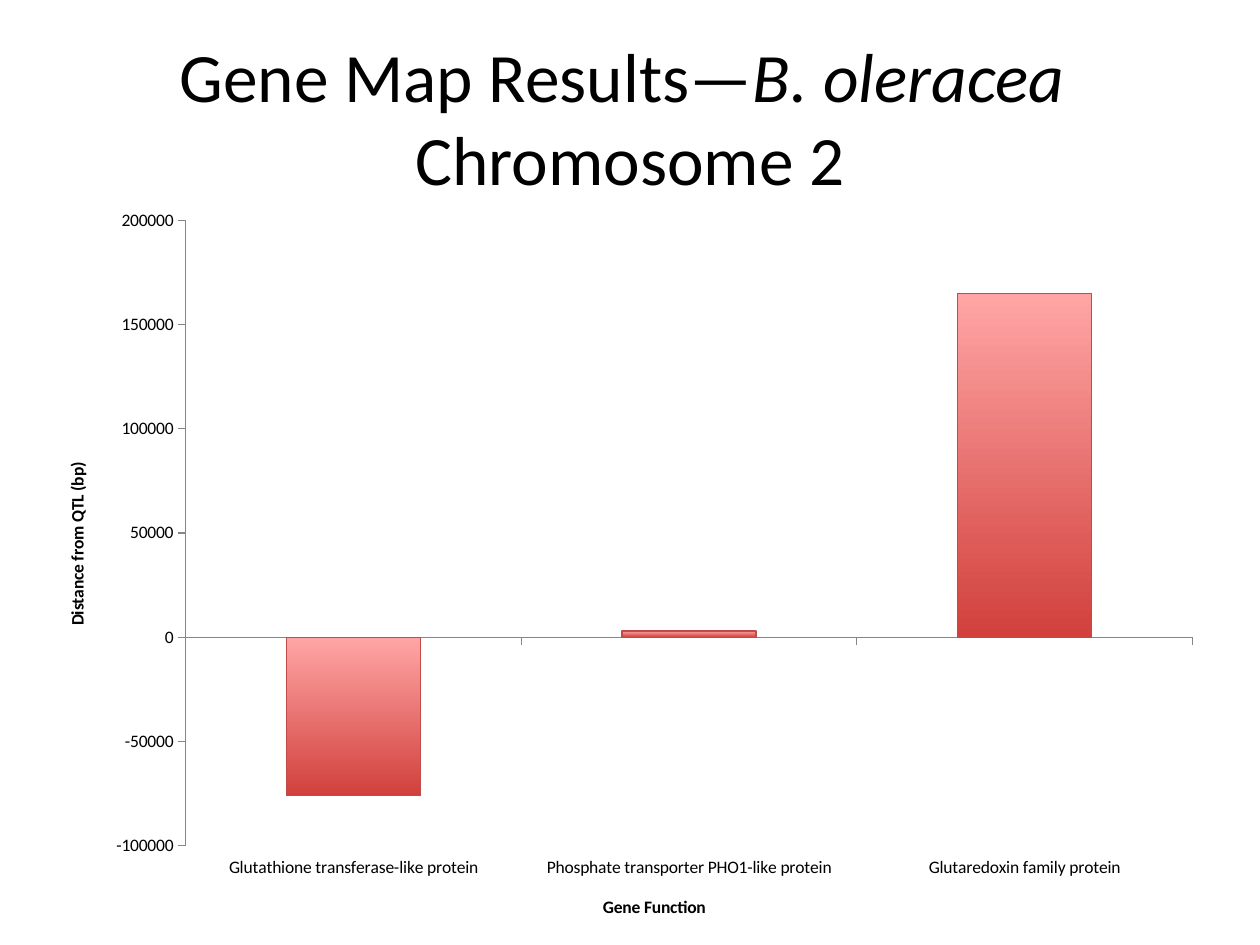
from pptx import Presentation
from pptx.chart.data import CategoryChartData
from pptx.dml.color import RGBColor
from pptx.enum.chart import XL_CHART_TYPE as ChartType, XL_TICK_LABEL_POSITION as LabelPos
from pptx.enum.chart import XL_TICK_MARK as TickMark
from pptx.enum.text import MSO_ANCHOR, PP_ALIGN
from pptx.util import Cm, Pt

COLORS = {"text": "000000", "axis": "868686", "bar_dark": "D1403C",
          "bar_light": "FFA6A5", "bar_line": "BF4C48"}
FONT = "Calibri"
GENES = {
    "Glutathione transferase-like protein": -76000,
    "Phosphate transporter PHO1-like protein": 3000,
    "Glutaredoxin family protein": 165000,
}


def color(name):
    return RGBColor.from_string(COLORS[name])


def style_font(font, size, bold=False, italic=False):
    font.name, font.size = FONT, Pt(size)
    font.bold, font.italic = bold, italic
    font.color.rgb = color("text")


def add_title(slide, x, y, w, h):
    sp = slide.shapes.title
    sp.left, sp.top, sp.width, sp.height = x, y, w, h
    tf = sp.text_frame
    tf.word_wrap = True
    tf.vertical_anchor = MSO_ANCHOR.MIDDLE
    p = tf.paragraphs[0]
    p.alignment = PP_ALIGN.CENTER
    for text, italic in (("Gene Map Results—", False), ("B. oleracea ", True), (None, False),
                         ("Chromosome 2", False)):
        if text is None:
            p.add_line_break()
            continue
        r = p.add_run()
        r.text = text
        style_font(r.font, 39.6, italic=italic)


def style_axis(axis, title):
    axis.has_major_gridlines = False
    axis.major_tick_mark = TickMark.OUTSIDE
    axis.minor_tick_mark = TickMark.NONE
    axis.format.line.color.rgb = color("axis")
    axis.format.line.width = Pt(0.75)
    style_font(axis.tick_labels.font, 10)
    r = axis.axis_title.text_frame.paragraphs[0].add_run()
    r.text = title
    style_font(r.font, 10, bold=True)


def add_distance_chart(slide, x, y, w, h):
    data = CategoryChartData(number_format="General")
    data.categories = list(GENES)
    data.add_series("Series 1", list(GENES.values()))
    chart = slide.shapes.add_chart(ChartType.COLUMN_CLUSTERED, x, y, w, h, data).chart
    style_font(chart.font, 10)
    chart.has_legend = False
    chart.has_title = False

    style_axis(chart.category_axis, "Gene Function")
    chart.category_axis.tick_label_position = LabelPos.LOW
    style_axis(chart.value_axis, "Distance from QTL (bp)")
    chart.value_axis.minimum_scale = -100000
    chart.value_axis.maximum_scale = 200000
    chart.value_axis.major_unit = 50000

    plot = chart.plots[0]
    plot.gap_width = 150
    plot.vary_by_categories = False
    bars = plot.series[0]
    bars.invert_if_negative = False
    fill = bars.format.fill
    fill.gradient()
    fill.gradient_angle = 90
    for stop, name, position in zip(fill.gradient_stops, ("bar_dark", "bar_light"), (0, 1)):
        stop.color.rgb = color(name)
        stop.position = position
    bars.format.line.color.rgb = color("bar_line")
    bars.format.line.width = Pt(0.75)


def main():
    prs = Presentation()
    prs.slide_width, prs.slide_height = Cm(25.4), Cm(19.05)
    slide = prs.slides.add_slide(prs.slide_layouts[5])
    add_title(slide, Cm(1.27), Cm(0.76), Cm(22.86), Cm(3.18))
    add_distance_chart(slide, Cm(0.81), Cm(3.94), Cm(23.7), Cm(15.09))
    prs.save("out.pptx")


if __name__ == "__main__":
    main()
